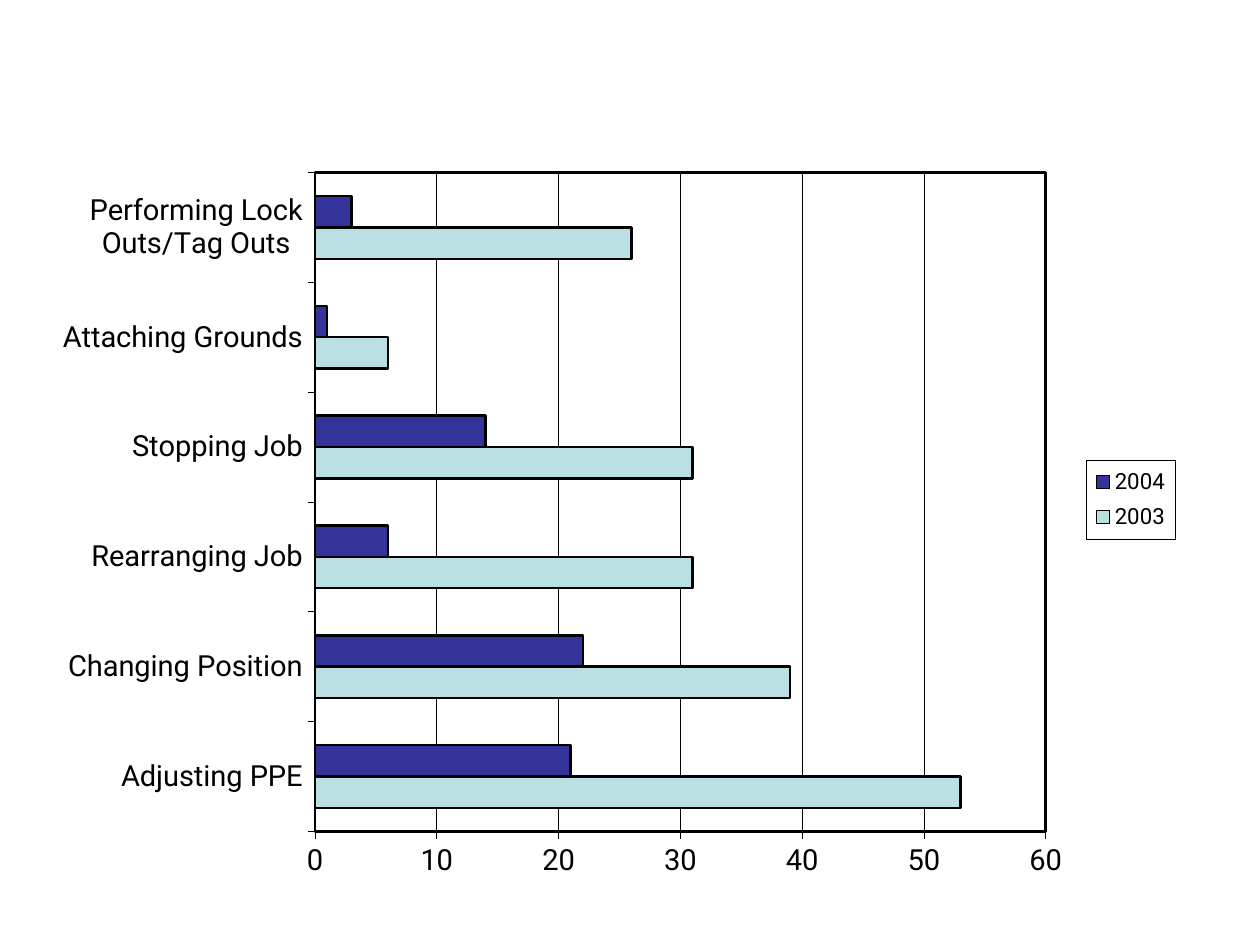
from lxml import etree
from pptx import Presentation
from pptx.chart.data import CategoryChartData
from pptx.dml.color import RGBColor
from pptx.enum import chart as kinds
from pptx.oxml import ns
from pptx.util import Inches, Pt

BLACK = RGBColor(0, 0, 0)
FONT = "Roboto"
CATEGORIES = ["Adjusting PPE", "Changing Position", "Rearranging Job",
              "Stopping Job", "Attaching Grounds", "Performing Lock Outs/Tag Outs"]
SERIES = [
    ("2003", [53, 39, 31, 31, 6, 26], RGBColor(0xBB, 0xE0, 0xE3)),
    ("2004", [21, 22, 6, 14, 1, 3], RGBColor(0x33, 0x33, 0x99)),
]
CHART_FRAME = (0.26, 1.21, 9.11, 6.04)
PLOT_FRAME = (2.5, 1.37, 5.8, 5.23)
LEGEND_FRAME = (8.62, 3.65, 0.71, 0.63)
THIN, THICK = 0.35, 1.38


def style_font(font, size):
    font.name, font.size, font.bold = FONT, Pt(size), False
    font.color.rgb = BLACK


def style_line(line, width):
    line.color.rgb = BLACK
    line.width = Pt(width)


def add_outline(parent, width):
    properties = etree.Element(ns.qn("c:spPr"))
    line = etree.SubElement(properties, ns.qn("a:ln"), w=str(Pt(width)))
    fill = etree.SubElement(line, ns.qn("a:solidFill"))
    etree.SubElement(fill, ns.qn("a:srgbClr"), val=str(BLACK))
    text = parent.find(ns.qn("c:txPr"))
    if text is None:
        parent.append(properties)
    else:
        text.addprevious(properties)


def place(parent, index, frame, inner=False):
    for old in parent.findall(ns.qn("c:layout")):
        parent.remove(old)
    layout = etree.Element(ns.qn("c:layout"))
    manual = etree.SubElement(layout, ns.qn("c:manualLayout"))
    left, top, width, height = CHART_FRAME
    x, y, w, h = frame
    settings = [("layoutTarget", "inner")] if inner else []
    settings += [("xMode", "edge"), ("yMode", "edge"),
                 ("x", (x - left) / width), ("y", (y - top) / height),
                 ("w", w / width), ("h", h / height)]
    for name, value in settings:
        etree.SubElement(manual, ns.qn("c:" + name), val=str(value))
    parent.insert(index, layout)


deck = Presentation()
deck.slide_width, deck.slide_height = Inches(10), Inches(7.5)
page = deck.slides.add_slide(deck.slide_layouts[6])

data = CategoryChartData()
data.categories = CATEGORIES
for name, values, color in SERIES:
    data.add_series(name, values)
chart = page.shapes.add_chart(kinds.XL_CHART_TYPE.BAR_CLUSTERED,
                              *map(Inches, CHART_FRAME), data).chart
chart.has_title = False
style_font(chart.font, 16.6)

plot = chart.plots[0]
plot.gap_width, plot.overlap, plot.vary_by_categories = 150, 0, False
for bars, (name, values, color) in zip(plot.series, SERIES):
    bars.format.fill.solid()
    bars.format.fill.fore_color.rgb = color
    bars.invert_if_negative = False
    style_line(bars.format.line, THICK)

for axis in (chart.category_axis, chart.value_axis):
    axis.major_tick_mark = kinds.XL_TICK_MARK.OUTSIDE
    axis.minor_tick_mark = kinds.XL_TICK_MARK.NONE
    style_font(axis.tick_labels.font, 16.6)
    style_line(axis.format.line, THIN)
scale = chart.value_axis
scale.minimum_scale, scale.maximum_scale, scale.major_unit = 0, 60, 10
scale.has_major_gridlines = True
style_line(scale.major_gridlines.format.line, THIN)

chart.has_legend = True
legend = chart.legend
legend.position = kinds.XL_LEGEND_POSITION.RIGHT
legend.include_in_layout = False
style_font(legend.font, 12.7)

plot_area = chart.element.find(".//" + ns.qn("c:plotArea"))
legend_box = chart.element.find(".//" + ns.qn("c:legend"))
place(plot_area, 0, PLOT_FRAME, inner=True)
place(legend_box, 1, LEGEND_FRAME)
add_outline(plot_area, THICK)
add_outline(legend_box, THIN)

deck.save("out.pptx")
